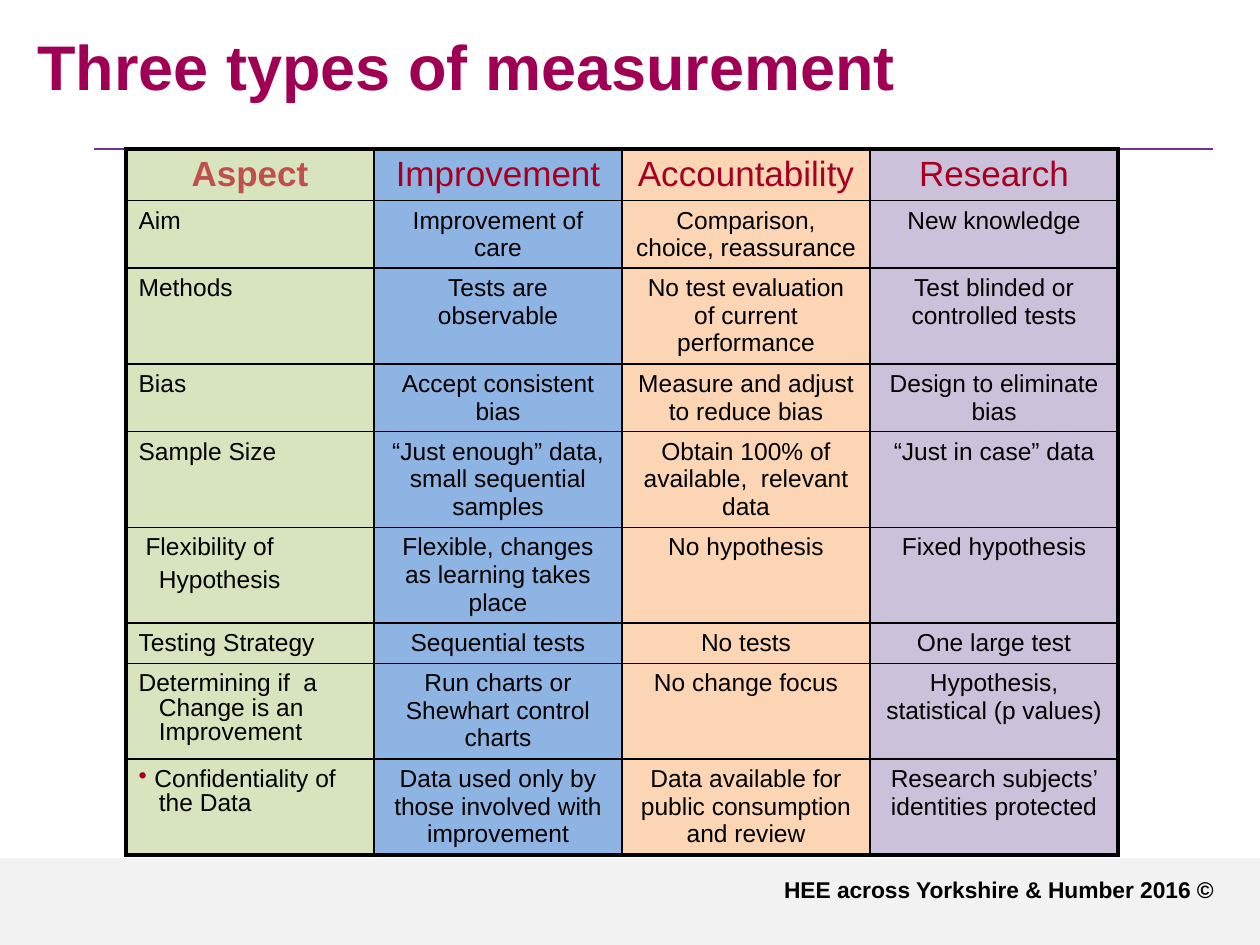
import pptx
import pptx.dml.color
import pptx.enum.shapes
import pptx.enum.text
import pptx.oxml.xmlchemy
import pptx.util

Cm = pptx.util.Cm
Pt = pptx.util.Pt
RGBColor = pptx.dml.color.RGBColor
ALIGN = pptx.enum.text.PP_ALIGN
ANCHOR = pptx.enum.text.MSO_ANCHOR

FONT = "Arial"
BLACK = RGBColor(0x00, 0x00, 0x00)
PLUM = RGBColor(0xA0, 0x00, 0x54)
PURPLE = RGBColor(0x70, 0x30, 0xA0)
BAND_GREY = RGBColor(0xF2, 0xF2, 0xF2)
BRICK = RGBColor(0xC0, 0x50, 0x4D)
CRIMSON = RGBColor(0xA5, 0x00, 0x21)
COLUMN_FILLS = [
    RGBColor(0xD7, 0xE4, 0xBD),
    RGBColor(0x8E, 0xB4, 0xE3),
    RGBColor(0xFC, 0xD5, 0xB5),
    RGBColor(0xCC, 0xC1, 0xDA),
]

COLUMN_WIDTH = 5.0
HEADER_HEIGHT = 1.04
HEIGHT_BY_LINES = {1: 0.8, 2: 1.36, 3: 1.93}
HANGING = 0.41  # left indent of continued aspect names, in cm

HEADERS = ["Aspect", "Improvement", "Accountability", "Research"]

# Lines of height, aspect paragraphs (text and format), then the three types
ROWS = [
    (2, [("Aim", {})],
     "Improvement of care", "Comparison, choice, reassurance", "New knowledge"),
    (3, [("Methods", {})],
     "Tests are observable", "No test evaluation of current performance",
     "Test blinded or controlled tests"),
    (2, [("Bias", {})],
     "Accept consistent bias", "Measure and adjust to reduce bias",
     "Design to eliminate bias"),
    (3, [("Sample Size", {})],
     "“Just enough” data, small sequential samples",
     "Obtain 100% of available,  relevant data", "“Just in case” data"),
    (3, [("Flexibility of", {"left": 0.14}),
         ("Hypothesis", {"left": HANGING, "before": 2.8})],
     "Flexible, changes as learning takes place", "No hypothesis",
     "Fixed hypothesis"),
    (1, [("Testing Strategy", {})],
     "Sequential tests", "No tests", "One large test"),
    (3, [("Determining if  a", {}),
         ("Change is an", {"left": HANGING, "before": 2.8, "spacing": 0.64}),
         ("Improvement", {"left": HANGING, "before": 2.8, "spacing": 0.74})],
     "Run charts or Shewhart control charts", "No change focus",
     "Hypothesis, statistical (p values)"),
    (3, [("Confidentiality of", {"left": 0.32, "bullet": CRIMSON}),
         ("the Data", {"left": HANGING, "before": 2.8, "spacing": 0.64})],
     "Data used only by those involved with improvement",
     "Data available for public consumption and review",
     "Research subjects’ identities protected"),
]


def new_element(tag, **attributes):
    element = pptx.oxml.xmlchemy.OxmlElement(tag)
    for name, value in attributes.items():
        element.set(name, str(value))
    return element


def add_xml(parent, tag, **attributes):
    child = new_element(tag, **attributes)
    parent.append(child)
    return child


def write(para, text, size=14, color=BLACK, bold=False, align=ALIGN.LEFT,
          left=0, before=0, spacing=None, bullet=None):
    """Put text in a paragraph; left is in cm, bullet is the bullet's colour."""
    properties = para._p.get_or_add_pPr()
    if left:
        properties.set("marL", str(int(Cm(left))))
        properties.set("indent", str(-int(Cm(left)) if bullet else 0))
    if bullet:
        bullet_color = add_xml(properties, "a:buClr")
        add_xml(bullet_color, "a:srgbClr", val=bullet)
        add_xml(properties, "a:buChar", char="•")
    para.alignment = align
    if before:
        para.space_before = Pt(before)
    if spacing:
        para.line_spacing = spacing
    span = para.add_run()
    span.text = text
    span.font.name = FONT
    span.font.size = Pt(size)
    span.font.bold = bold
    span.font.color.rgb = color


def set_borders(cell, widths):
    """Draw black borders; widths are points for left, right, top, bottom."""
    properties = cell._tc.get_or_add_tcPr()
    for position, (side, width) in enumerate(zip("LRTB", widths)):
        line = new_element("a:ln" + side, w=int(Pt(width)))
        fill = add_xml(line, "a:solidFill")
        add_xml(fill, "a:srgbClr", val=BLACK)
        properties.insert(position, line)


def add_title(page, text):
    title = page.shapes.title
    title.left, title.top = Cm(0.5), Cm(0.53)
    title.width, title.height = Cm(21.8), Cm(1.58)
    frame = title.text_frame
    frame.auto_size = pptx.enum.text.MSO_AUTO_SIZE.NONE
    frame.vertical_anchor = ANCHOR.MIDDLE
    write(frame.paragraphs[0], text, size=36, color=PLUM, bold=True)


def add_band(page):
    band = page.shapes.add_shape(
        pptx.enum.shapes.MSO_SHAPE.RECTANGLE,
        Cm(0), Cm(17.3), Cm(25.4), Cm(1.75))
    band.shadow.inherit = False
    band.fill.solid()
    band.fill.fore_color.rgb = BAND_GREY
    band.line.fill.background()


def add_rule(page):
    rule = page.shapes.add_connector(
        pptx.enum.shapes.MSO_CONNECTOR.STRAIGHT,
        Cm(1.9), Cm(3), Cm(24.45), Cm(3))
    rule.line.color.rgb = PURPLE
    rule.line.width = Pt(1)
    add_xml(rule._element.spPr, "a:effectLst")


def add_footer(page, text):
    box = page.shapes.add_textbox(Cm(0.25), Cm(17.53), Cm(24.46), Cm(1.02))
    box.text_frame.word_wrap = True
    write(box.text_frame.paragraphs[0], text, size=13, bold=True,
          align=ALIGN.RIGHT)


def add_comparison(page):
    heights = [HEADER_HEIGHT] + [HEIGHT_BY_LINES[row[0]] for row in ROWS]
    row_count, column_count = len(heights), len(HEADERS)
    table = page.shapes.add_table(
        row_count, column_count, Cm(2.54), Cm(3),
        Cm(COLUMN_WIDTH * column_count), Cm(sum(heights))).table
    table.first_row = False
    table.horz_banding = False
    for column in table.columns:
        column.width = Cm(COLUMN_WIDTH)
    for row, height in zip(table.rows, heights):
        row.height = Cm(height)

    # Column fills, with a heavy frame around thin inner lines
    for r in range(row_count):
        for c in range(column_count):
            cell = table.cell(r, c)
            cell.fill.solid()
            cell.fill.fore_color.rgb = COLUMN_FILLS[c]
            outer = (c == 0, c == column_count - 1, r == 0, r == row_count - 1)
            set_borders(cell, [2.25 if edge else 1 for edge in outer])

    # Header row
    for c, text in enumerate(HEADERS):
        write(table.cell(0, c).text_frame.paragraphs[0], text, size=20,
              color=CRIMSON if c else BRICK, bold=c == 0, align=ALIGN.CENTER)

    # Body rows
    for r, (_, aspect, *entries) in enumerate(ROWS, start=1):
        frame = table.cell(r, 0).text_frame
        for i, (text, style) in enumerate(aspect):
            para = frame.add_paragraph() if i else frame.paragraphs[0]
            write(para, text, **style)
        for c, text in enumerate(entries, start=1):
            write(table.cell(r, c).text_frame.paragraphs[0], text,
                  align=ALIGN.CENTER)


def main():
    deck = pptx.Presentation()
    deck.slide_width, deck.slide_height = Cm(25.4), Cm(19.05)
    page = deck.slides.add_slide(deck.slide_layouts[5])
    add_band(page)
    add_rule(page)
    add_comparison(page)
    add_title(page, "Three types of measurement")
    add_footer(page, "HEE across Yorkshire & Humber 2016 ©")
    deck.save("out.pptx")


if __name__ == "__main__":
    main()
